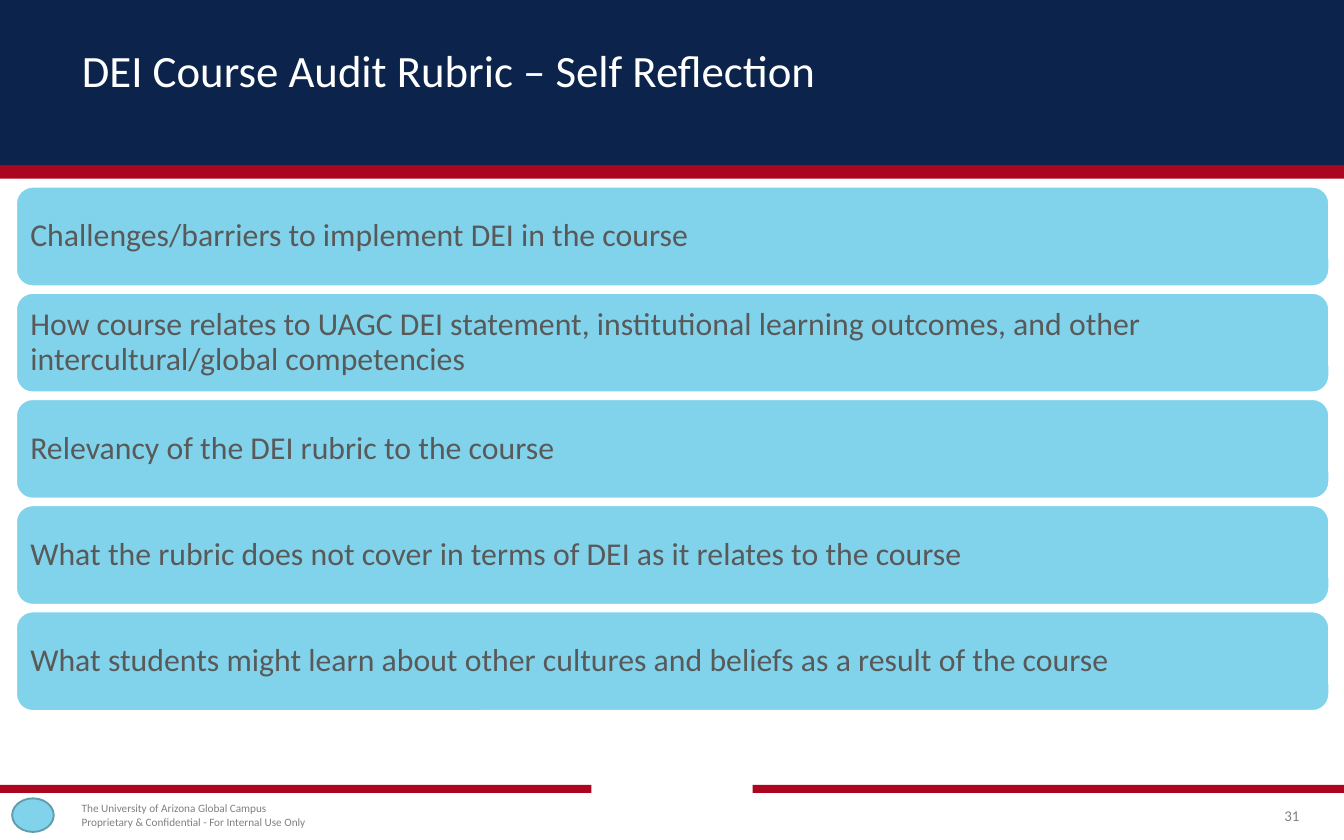
from pptx import Presentation
from pptx.dml.color import RGBColor
from pptx.enum import shapes, text
from pptx.util import Inches, Pt

NAVY = RGBColor(0x0C, 0x23, 0x4B)
RED = RGBColor(0xAB, 0x05, 0x20)
SKY = RGBColor(0x81, 0xD3, 0xEB)
SKY_DARK = RGBColor(0x5F, 0x9C, 0xAE)
WHITE = RGBColor(0xFF, 0xFF, 0xFF)
GREY = RGBColor(0x80, 0x80, 0x80)
DARK_GREY = RGBColor(0x59, 0x59, 0x59)
FONT = "Calibri"
RECT = shapes.MSO_SHAPE.RECTANGLE
LEFT, RIGHT = text.PP_ALIGN.LEFT, text.PP_ALIGN.RIGHT

QUESTIONS = [
    "Challenges/barriers to implement DEI in the course",
    "How course relates to UAGC DEI statement, institutional learning outcomes, "
    "and other intercultural/global competencies",
    "Relevancy of the DEI rubric to the course",
    "What the rubric does not cover in terms of DEI as it relates to the course",
    "What students might learn about other cultures and beliefs as a result of the course",
]


def add_shape(s, kind, box, fill, line=None):
    sp = s.shapes.add_shape(kind, *map(Inches, box))
    sp.shadow.inherit = False
    sp.fill.solid()
    sp.fill.fore_color.rgb = fill
    if line is None:
        sp.line.fill.background()
    else:
        sp.line.color.rgb = line
        sp.line.width = Pt(1)
    return sp


def write(sp, words, size, color, insets, align=LEFT, spacing=1.0):
    """Fill a shape with vertically centred text; insets run left, top, right, bottom."""
    tf = sp.text_frame
    tf.text = words
    tf.word_wrap = True
    tf.auto_size = text.MSO_AUTO_SIZE.NONE
    tf.vertical_anchor = text.MSO_ANCHOR.MIDDLE
    tf.margin_left, tf.margin_top, tf.margin_right, tf.margin_bottom = map(Inches, insets)
    for p in tf.paragraphs:
        p.alignment = align
        p.line_spacing = spacing
        for r in p.runs:
            r.font.name = FONT
            r.font.size = Pt(size)
            r.font.color.rgb = color


def add_text(s, box, words, size, color, insets, align=LEFT):
    write(s.shapes.add_textbox(*map(Inches, box)), words, size, color, insets, align)


def add_title(s, words):
    title = s.shapes.title
    title.left, title.top, title.width, title.height = map(Inches, (0.51, 0.34, 8.99, 0.4))
    write(title, words, 24, WHITE, (0.1,) * 4, spacing=0.9)
    # Bring the placeholder in front of the header band.
    title.element.getparent().append(title.element)


def add_question_bars(s, questions):
    for i, question in enumerate(questions):
        bar = add_shape(s, shapes.MSO_SHAPE.ROUNDED_RECTANGLE,
                        (0.12, 1.39 + 0.79 * i, 9.77, 0.74), SKY, WHITE)
        write(bar, question, 17, DARK_GREY, (0.07,) * 4, spacing=0.9)


def add_footer(s):
    for left in (0, 5.6):
        add_shape(s, RECT, (left, 5.84, 4.4, 0.06), RED)
    add_text(s, (0.51, 5.94, 2.06, 0.25),
             "The University of Arizona Global Campus\n"
             "Proprietary & Confidential - For Internal Use Only",
             6, GREY, (0.1, 0, 0, 0))
    add_text(s, (9.16, 5.94, 0.51, 0.25), "31", 8, GREY, (0,) * 4, RIGHT)
    add_shape(s, shapes.MSO_SHAPE.OVAL, (0.09, 5.94, 0.31, 0.25), SKY, SKY_DARK)


def main():
    prs = Presentation()
    prs.slide_width, prs.slide_height = Inches(10), Inches(6.25)
    s = prs.slides.add_slide(prs.slide_layouts[5])
    add_shape(s, RECT, (0, 0, 10, 1.33), RED)
    add_shape(s, RECT, (0, 0, 10, 1.23), NAVY)
    add_title(s, "DEI Course Audit Rubric – Self Reflection")
    add_question_bars(s, QUESTIONS)
    add_footer(s)
    prs.save("out.pptx")


if __name__ == "__main__":
    main()
